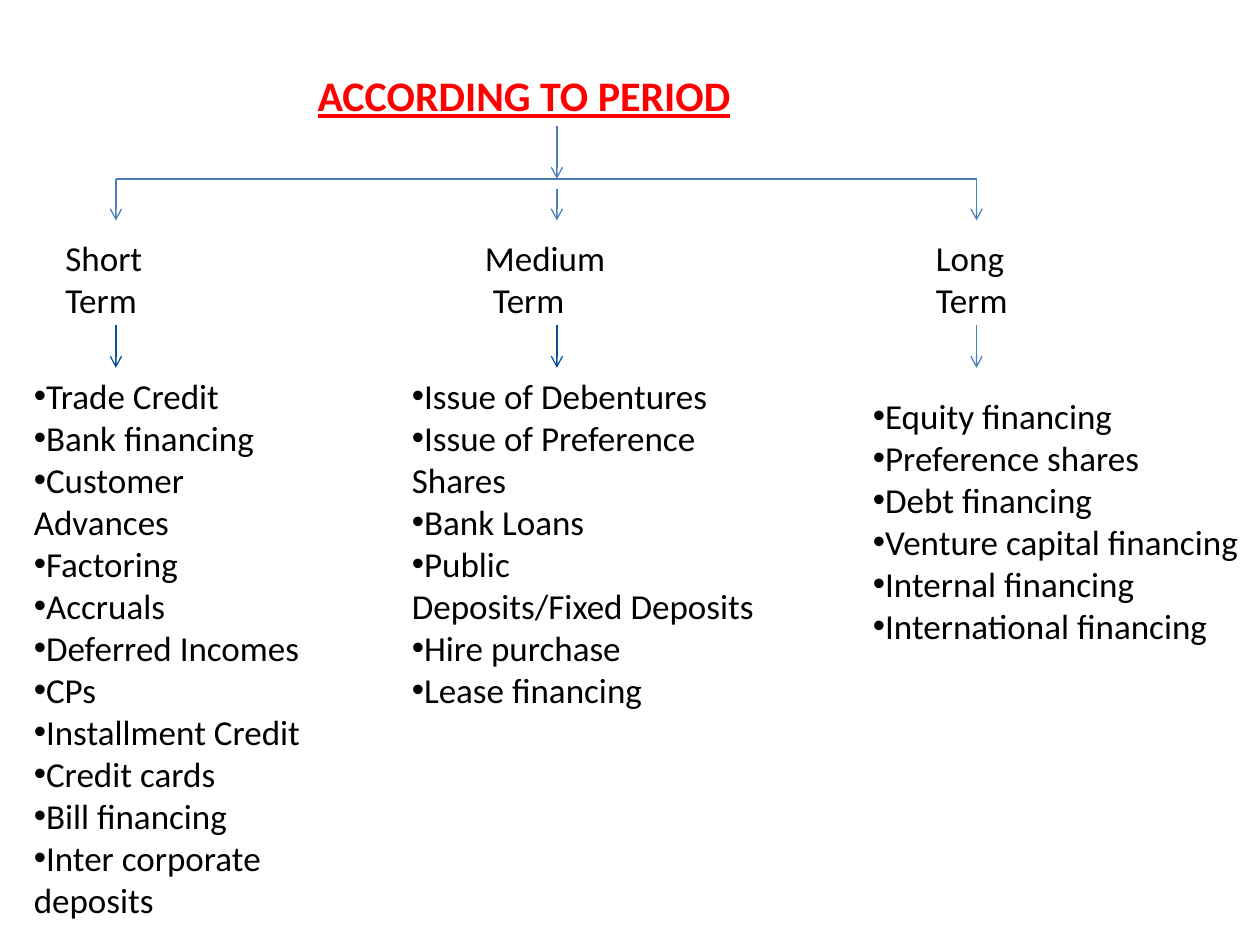
from lxml import etree
from pptx import Presentation
from pptx import util as u
from pptx.dml.color import RGBColor
from pptx.enum import shapes, text
from pptx.oxml import ns

COLORS = {"title": "FF0000", "body": "000000", "line": "4B7EBC", "dark": "065093"}
FONT = "Calibri"
BAR_Y = 1.42

# Per column: axis, top of branch arrow, lower arrow colour,
# heading and its box, list items and their box (left, top, width, height)
COLUMNS = [
    (0.92, BAR_Y, "dark", ["Short", "Term"], (0.42, 1.83, 1.5, 0.77),
     ["Trade Credit", "Bank financing", "Customer\vAdvances", "Factoring",
      "Accruals", "Deferred Incomes", "CPs", "Installment Credit",
      "Credit cards", "Bill financing", "Inter corporate deposits"],
     (0.17, 2.92, 2.67, 5.1)),
    (4.42, 1.5, "dark", ["Medium", " Term"], (3.75, 1.83, 1.75, 0.77),
     ["Issue of Debentures", "Issue of Preference Shares", "Bank Loans",
      "Public\vDeposits/Fixed Deposits", "Hire purchase", "Lease financing"],
     (3.17, 2.92, 2.92, 3.43)),
    (7.75, BAR_Y, "line", ["Long", "Term"], (7.33, 1.83, 1.25, 0.77),
     ["Equity financing", "Preference shares", "Debt financing",
      "Venture capital financing", "Internal financing",
      "International financing"],
     (6.83, 3.08, 3.17, 2.43)),
]


def set_font(para, size, color):
    para.font.name = FONT
    para.font.size = u.Pt(size)
    para.font.color.rgb = RGBColor.from_string(COLORS[color])


def add_line(page, start, end, color="line", arrow=False):
    points = [u.Inches(value) for value in (*start, *end)]
    line = page.shapes.add_connector(shapes.MSO_CONNECTOR.STRAIGHT, *points)
    line.line.color.rgb = RGBColor.from_string(COLORS[color])
    line.line.width = u.Pt(0.75)
    if arrow:
        outline = line.line._get_or_add_ln()
        etree.SubElement(outline, ns.qn("a:tailEnd"), type="arrow")
    etree.SubElement(line._element.spPr, ns.qn("a:effectLst"))


def add_bullet(para):
    props = para._p.get_or_add_pPr()
    props.set("marL", "0")
    props.set("indent", "0")
    etree.SubElement(props, ns.qn("a:buFont"), typeface="Arial")
    etree.SubElement(props, ns.qn("a:buChar"), char="•")


def add_text(page, box, lines, bulleted=False):
    frame = page.shapes.add_textbox(*map(u.Inches, box)).text_frame
    frame.word_wrap = True
    frame.auto_size = text.MSO_AUTO_SIZE.SHAPE_TO_FIT_TEXT
    for number, line in enumerate(lines):
        para = frame.add_paragraph() if number else frame.paragraphs[0]
        para.text = line
        set_font(para, 20, "body")
        if bulleted:
            add_bullet(para)


def add_title(page, box):
    title = page.shapes.title
    title.left, title.top, title.width, title.height = map(u.Inches, box)
    frame = title.text_frame
    frame.text = "ACCORDING TO PERIOD"
    frame.vertical_anchor = text.MSO_ANCHOR.TOP
    frame.auto_size = text.MSO_AUTO_SIZE.SHAPE_TO_FIT_TEXT
    para = frame.paragraphs[0]
    para.alignment = text.PP_ALIGN.LEFT
    set_font(para, 24, "title")
    para.font.bold = True
    para.font.underline = True


def add_column(page, axis, branch_top, color, heading, heading_box, items, list_box):
    add_line(page, (axis, branch_top), (axis, 1.75), arrow=True)
    add_text(page, heading_box, heading)
    add_line(page, (axis, 2.58), (axis, 2.92), color, arrow=True)
    add_text(page, list_box, items, bulleted=True)


def main():
    deck = Presentation()
    deck.slide_width, deck.slide_height = u.Inches(10), u.Inches(7.5)
    page = deck.slides.add_slide(deck.slide_layouts[5])

    # Title and the bar that branches from it
    add_title(page, (2.42, 0.5, 5.67, 0.5))
    add_line(page, (COLUMNS[0][0], BAR_Y), (COLUMNS[-1][0], BAR_Y))
    add_line(page, (COLUMNS[1][0], 1), (COLUMNS[1][0], BAR_Y), arrow=True)

    # One column for each term
    for column in COLUMNS:
        add_column(page, *column)

    deck.save("out.pptx")


if __name__ == "__main__":
    main()
